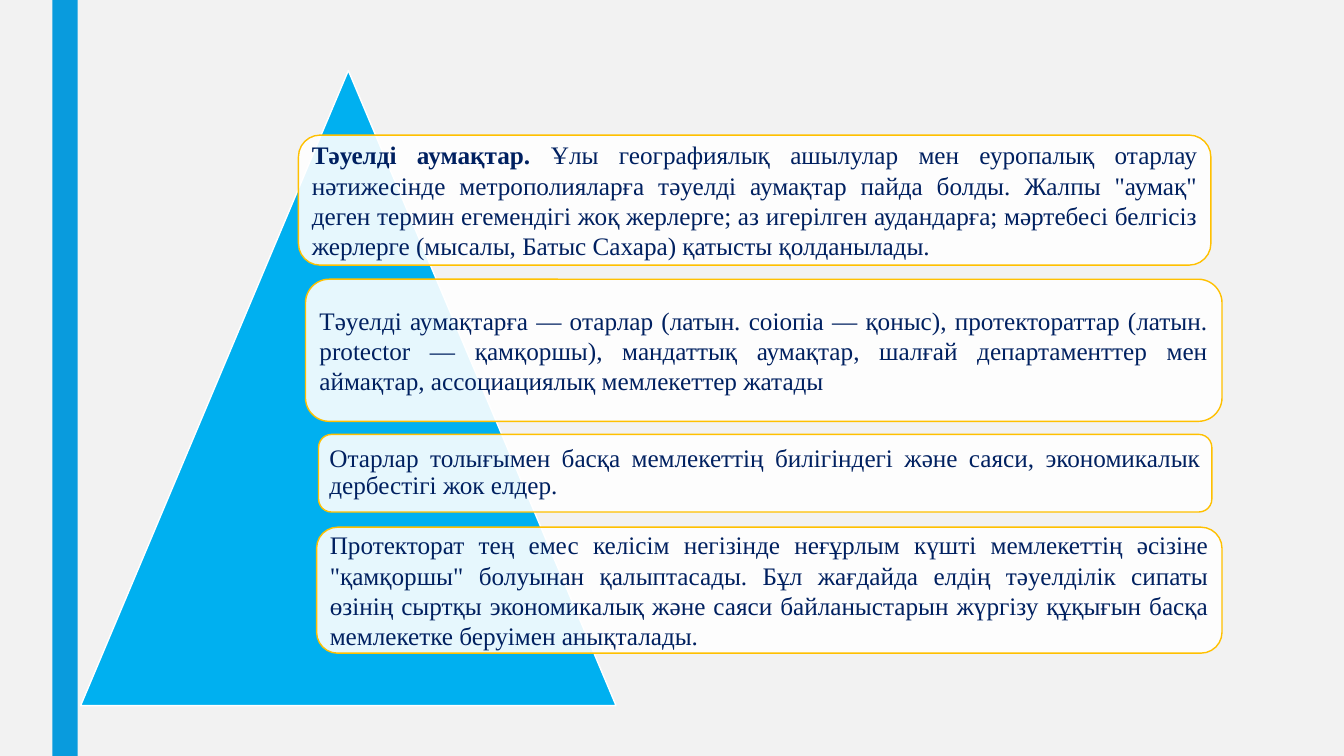
from dataclasses import dataclass

from lxml.etree import SubElement
from pptx import Presentation
from pptx.dml.color import RGBColor
from pptx.enum.shapes import MSO_SHAPE as Kind
from pptx.enum.text import MSO_ANCHOR as Anchor, PP_ALIGN as Align
from pptx.oxml.ns import qn
from pptx.shapes.autoshape import Shape
from pptx.slide import Slide
from pptx.util import Inches, Pt

COLORS = {
    "back": "F2F2F2",
    "bar": "099BDD",
    "peak": "00B0F0",
    "white": "FFFFFF",
    "gold": "FFC000",
    "navy": "002060",
}
FONT = "Times New Roman"
PAD = 0.07


@dataclass
class Card:
    left: float
    top: float
    width: float
    height: float
    text: str
    lead: str = ""
    space: float = 1.0


CARDS = [
    Card(3.03, 2.77, 9.09, 1.41,
         "Тәуелді аумақтарға — отарлар (латын. соіопіа — қоныс), протектораттар "
         "(латын. protector — қамқоршы), мандаттық аумақтар, шалғай департаменттер "
         "мен аймақтар, ассоциациялық мемлекеттер жатады "),
    Card(2.96, 1.34, 9.05, 1.29,
         " Ұлы географиялық ашылулар мен еуропалық отарлау нәтижесінде "
         "метрополияларға тәуелді аумақтар пайда болды. Жалпы \"аумақ\" деген термин "
         "егемендігі жоқ жерлерге; аз игерілген аудандарға; мәртебесі белгісіз "
         "жерлерге (мысалы, Батыс Сахара) қатысты қолданылады.",
         lead="Тәуелді аумақтар."),
    Card(3.16, 4.31, 8.86, 0.77,
         "Отарлар толығымен басқа мемлекеттің билігіндегі және саяси, "
         "экономикалык дербестігі жок елдер. ", space=0.9),
    Card(3.14, 5.23, 8.98, 1.25,
         "Протекторат тең емес келісім негізінде неғұрлым күшті мемлекеттің әсізіне "
         "\"қамқоршы\" болуынан қалыптасады. Бұл жағдайда елдің тәуелділік сипаты "
         "өзінің сыртқы экономикалық және саяси байланыстарын жүргізу құқығын басқа "
         "мемлекетке беруімен анықталады. "),
]


def color(name: str) -> RGBColor:
    return RGBColor.from_string(COLORS[name])


def add_box(slide: Slide, kind: Kind, left: float, top: float, width: float,
            height: float, fill: str, line: str = "") -> Shape:
    box = slide.shapes.add_shape(
        kind, Inches(left), Inches(top), Inches(width), Inches(height))
    box.shadow.inherit = False
    box.fill.solid()
    box.fill.fore_color.rgb = color(fill)
    if line:
        box.line.color.rgb = color(line)
        box.line.width = Pt(1)
    else:
        box.line.fill.background()
    return box


def set_alpha(box: Shape, share: int) -> None:
    """Set the opacity of a solid fill, in percent."""
    tint = box.fill._xPr.find(qn("a:solidFill"))[0]
    SubElement(tint, qn("a:alpha")).set("val", str(share * 1000))


def write(box: Shape, text: str, *, lead: str = "", size: float = 18,
          ink: str = "navy", space: float = 1.0) -> None:
    """Fill a shape with justified text after an optional bold lead."""
    frame = box.text_frame
    frame.word_wrap = True
    frame.vertical_anchor = Anchor.MIDDLE
    frame.margin_left = frame.margin_right = Inches(PAD)
    frame.margin_top = frame.margin_bottom = Inches(PAD)
    para = frame.paragraphs[0]
    para.alignment = Align.JUSTIFY
    para.line_spacing = space
    for part, bold in ((lead, True), (text, False)):
        if part:
            run = para.add_run()
            run.text = part
            run.font.name = FONT
            run.font.size = Pt(size)
            run.font.bold = bold
            run.font.color.rgb = color(ink)


def add_card(slide: Slide, card: Card) -> None:
    box = add_box(slide, Kind.ROUNDED_RECTANGLE, card.left, card.top,
                  card.width, card.height, "white", "gold")
    set_alpha(box, 90)
    write(box, card.text, lead=card.lead, space=card.space)


def main() -> None:
    deck = Presentation()
    deck.slide_width, deck.slide_height = Inches(13.33), Inches(7.5)
    slide = deck.slides.add_slide(deck.slide_layouts[6])
    slide.background.fill.solid()
    slide.background.fill.fore_color.rgb = color("back")

    add_box(slide, Kind.RECTANGLE, 0.52, 0, 0.25, 7.5, "bar")
    add_box(slide, Kind.ISOSCELES_TRIANGLE, 0.8, 0.7, 5.31, 6.3, "peak", "white")
    for card in CARDS:
        add_card(slide, card)
    deck.save("out.pptx")


if __name__ == "__main__":
    main()
